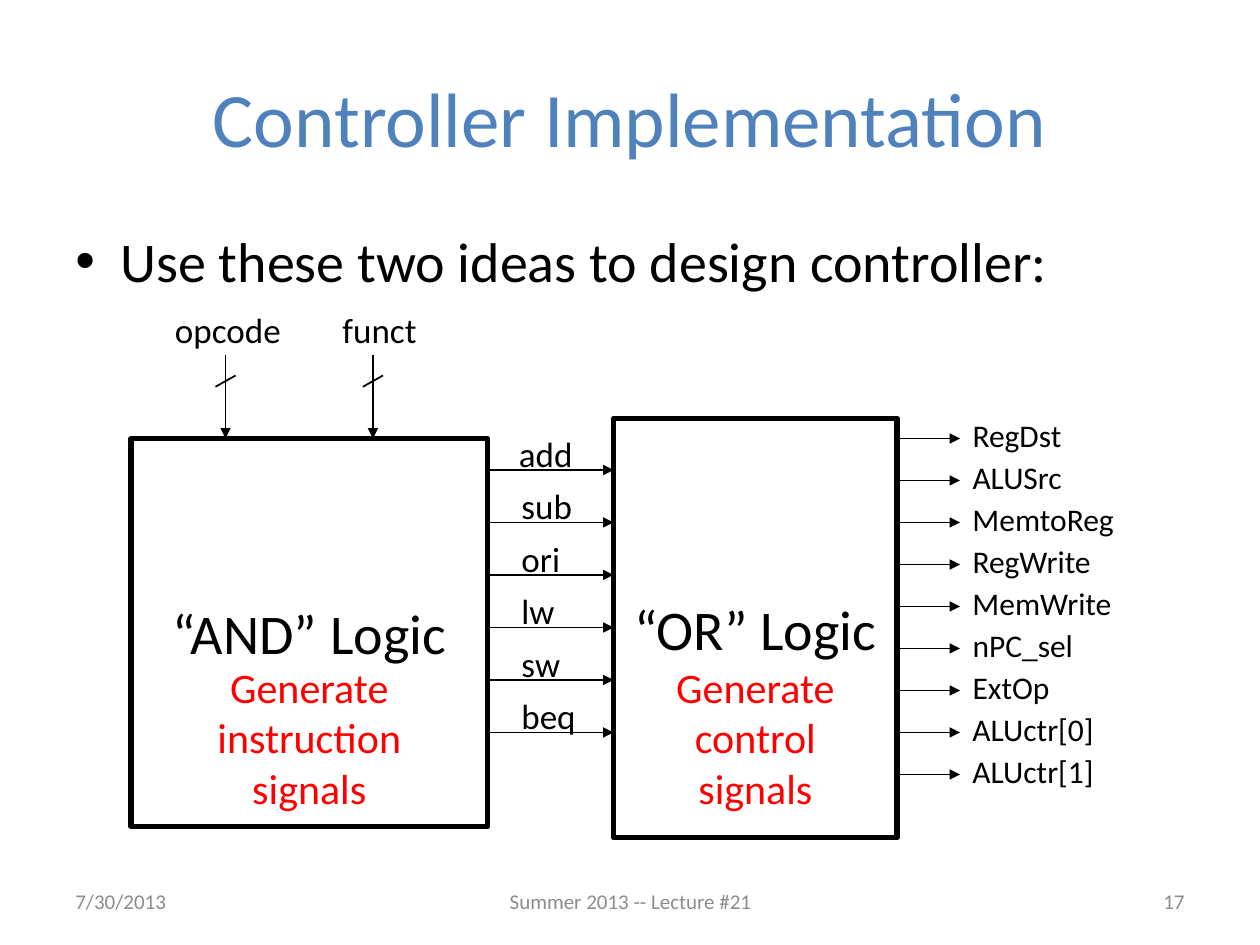
"""Build the controller implementation slide."""
from lxml.etree import SubElement
from pptx import Presentation
from pptx.dml.color import RGBColor
from pptx.enum.shapes import MSO_CONNECTOR as Conn, MSO_SHAPE as Shape
from pptx.enum.text import MSO_ANCHOR as Anchor, PP_ALIGN as Align
from pptx.oxml.ns import qn
from pptx.util import Inches, Pt

BLACK = RGBColor(0, 0, 0)
BLUE = RGBColor(0x4F, 0x81, 0xBD)
RED = RGBColor(0xFF, 0, 0)
GRAY = RGBColor(0x8C, 0x8C, 0x8C)

TITLE = "Controller Implementation"
POINT = "Use these two ideas to design controller:"
FOOT = [
    ("7/30/2013", 0.5, 2.33, Align.LEFT),
    ("Summer 2013 -- Lecture #21", 3.42, 3.17, Align.CENTER),
    ("17", 7.17, 2.33, Align.RIGHT),
]
BLOCKS = [
    ("“AND” Logic", "Generate instruction\vsignals", (1.04, 3.48, 2.83, 3.08)),
    ("“OR” Logic", "Generate control\vsignals", (4.87, 3.32, 2.25, 3.33)),
]
INPUTS = [("opcode", 1.29, 1.05, 1.79), ("funct", 2.62, 0.8, 2.96)]
OPS = [("add", 4.02, 0.63), ("sub", 4.04, 0.61), ("ori", 4.04, 0.51),
       ("lw", 4.04, 0.47), ("sw", 4.04, 0.51), ("beq", 4.04, 0.64)]
OUTPUTS = [("RegDst", 0.92), ("ALUSrc", 0.92), ("MemtoReg", 1.34),
           ("RegWrite", 1.15), ("MemWrite", 1.34), ("nPC_sel", 1.01),
           ("ExtOp", 0.82), ("ALUctr[0]", 1.17), ("ALUctr[1]", 1.17)]
OP_TOP, OP_GAP = 3.73, 5 / 12
OUT_TOP, OUT_GAP = 3.48, 1 / 3

deck = Presentation()
deck.slide_width, deck.slide_height = Inches(10), Inches(7.5)
slide = deck.slides.add_slide(deck.slide_layouts[6])


def style(shape, text, size, color, align, anchor, wrap):
    frame = shape.text_frame
    frame.text = text
    frame.word_wrap = wrap
    frame.vertical_anchor = anchor
    for para in frame.paragraphs:
        para.alignment = align
        for run in para.runs:
            run.font.size = Pt(size)
            run.font.name = "Calibri"
            run.font.color.rgb = color


def label(text, box, size, color=BLACK, align=Align.LEFT,
          anchor=Anchor.TOP, wrap=False):
    shape = slide.shapes.add_textbox(*map(Inches, box))
    style(shape, text, size, color, align, anchor, wrap)
    return shape


def block(text, box):
    shape = slide.shapes.add_shape(Shape.RECTANGLE, *map(Inches, box))
    shape.shadow.inherit = False
    shape.fill.background()
    shape.line.color.rgb = BLACK
    shape.line.width = Pt(3)
    style(shape, text, 32, BLACK, Align.CENTER, Anchor.MIDDLE, False)


def line(start, end, arrow=True):
    wire = slide.shapes.add_connector(
        Conn.STRAIGHT, *map(Inches, (*start, *end)))
    wire.line.color.rgb = BLACK
    wire.line.width = Pt(1)
    if arrow:
        SubElement(wire.line._get_or_add_ln(), qn("a:tailEnd"), type="triangle")
    SubElement(wire._element.spPr, qn("a:effectLst"))


def bullet(para):
    props = para._p.get_or_add_pPr()
    props.set("marL", str(Inches(0.36)))
    props.set("indent", str(-Inches(0.36)))
    SubElement(props, qn("a:buFont"), typeface="Arial")
    SubElement(props, qn("a:buChar"), char="•")


label(TITLE, (0.5, 0.3, 9, 1.25), 44, BLUE, Align.CENTER, Anchor.MIDDLE, True)
point = label(POINT, (0.5, 1.75, 9, 0.64), 32, wrap=True)
bullet(point.text_frame.paragraphs[0])

for name, task, box in BLOCKS:
    block(name, box)
    label(task, (box[0], 5.2, box[2], 1.31), 24, RED, Align.CENTER, wrap=True)

for name, left, width, x in INPUTS:
    label(name, (left, 2.4, width, 0.44), 20)
    line((x, 2.82), (x, 3.48))
    line((x - 0.08, 3.07), (x + 0.08, 2.98), arrow=False)

for i, (name, left, width) in enumerate(OPS):
    y = OP_TOP + i * OP_GAP
    line((3.87, y), (4.87, y))
    label(name, (left, y - 0.35, width, 0.44), 20)

for i, (name, width) in enumerate(OUTPUTS):
    y = OUT_TOP + i * OUT_GAP
    line((7.12, y), (7.62, y))
    label(name, (7.62, y - 0.23, width, 0.4), 18)

for text, left, width, align in FOOT:
    label(text, (left, 6.95, width, 0.4), 12, GRAY, align, Anchor.MIDDLE, True)

deck.save("out.pptx")
